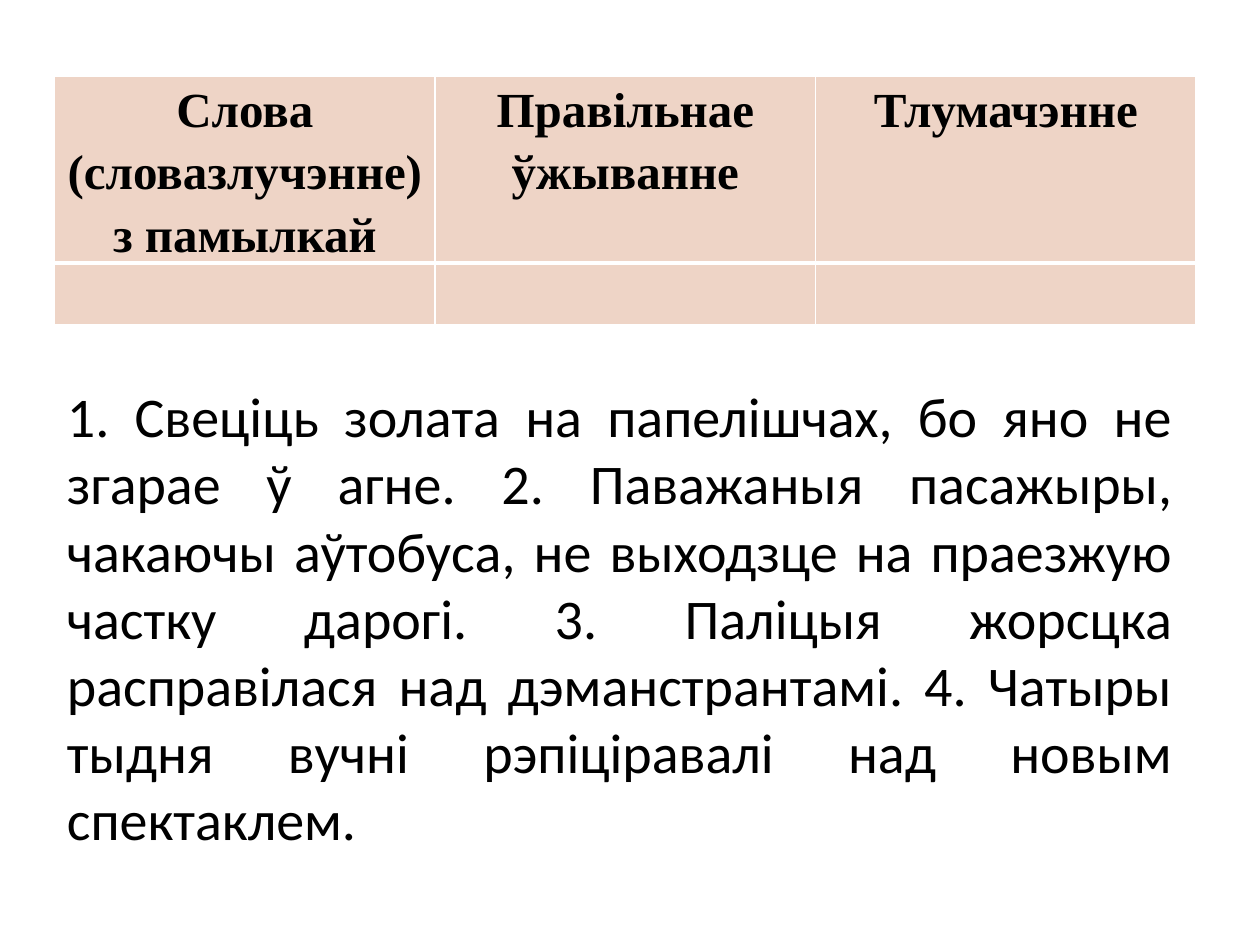
import pptx
import pptx.dml.color
import pptx.enum.text
import pptx.oxml
import pptx.oxml.ns
import pptx.util
from dataclasses import dataclass

Cm = pptx.util.Cm
Pt = pptx.util.Pt
Align = pptx.enum.text.PP_ALIGN


@dataclass(frozen=True)
class Theme:
    ink: str = "000000"
    cell: str = "EED4C6"
    rule: str = "FFFFFF"
    head_font: str = "Times New Roman"
    body_font: str = "Calibri"
    head_size: int = 28
    body_size: int = 32


class SlideBuilder:
    def __init__(self, page, theme):
        self.page = page
        self.theme = theme

    def fill_para(self, para, text, font, size, align, bold=False):
        para.text = text
        para.alignment = align
        for span in para.runs:
            span.font.name = font
            span.font.size = Pt(size)
            span.font.bold = bold
            span.font.color.rgb = pptx.dml.color.RGBColor.from_string(self.theme.ink)

    def borders(self, cell, widths):
        """Draw the cell edges; widths maps L, R, T, B (in that order) to points."""
        properties = cell._tc.get_or_add_tcPr()
        for index, (side, width) in enumerate(widths.items()):
            line = pptx.oxml.parse_xml(
                f'<a:ln{side} {pptx.oxml.ns.nsdecls("a")} w="{Pt(width)}">'
                f'<a:solidFill><a:srgbClr val="{self.theme.rule}"/></a:solidFill>'
                f'</a:ln{side}>')
            properties.insert(index, line)

    def table(self, headings, left, top, column_width, row_heights):
        frame = self.page.shapes.add_table(
            len(row_heights), len(headings), Cm(left), Cm(top),
            Cm(column_width * len(headings)), Cm(sum(row_heights)))
        grid = frame.table
        for column in grid.columns:
            column.width = Cm(column_width)
        for row, height in zip(grid.rows, row_heights):
            row.height = Cm(height)

        # Same fill everywhere, a heavier rule under the heading row
        for cell in grid.iter_cells():
            cell.fill.solid()
            cell.fill.fore_color.rgb = pptx.dml.color.RGBColor.from_string(self.theme.cell)
        for number, row in enumerate(grid.rows):
            top_rule, bottom_rule = (1, 3) if number == 0 else (3, 1)
            for cell in row.cells:
                self.borders(cell, {"L": 1, "R": 1, "T": top_rule, "B": bottom_rule})

        for cell, heading in zip(grid.rows[0].cells, headings):
            cell.margin_left = cell.margin_right = Cm(0.18)
            cell.margin_top = cell.margin_bottom = 0
            para = cell.text_frame.paragraphs[0]
            self.fill_para(para, heading, self.theme.head_font, self.theme.head_size,
                           Align.CENTER, bold=True)
            para.line_spacing = 1.15
            para.space_after = Pt(10)

    def text(self, content, left, top, width, height):
        box = self.page.shapes.add_textbox(Cm(left), Cm(top), Cm(width), Cm(height))
        frame = box.text_frame
        frame.word_wrap = True
        frame.auto_size = pptx.enum.text.MSO_AUTO_SIZE.SHAPE_TO_FIT_TEXT
        frame.vertical_anchor = pptx.enum.text.MSO_ANCHOR.MIDDLE
        self.fill_para(frame.paragraphs[0], content, self.theme.body_font,
                       self.theme.body_size, Align.JUSTIFY)


def main():
    deck = pptx.Presentation()
    deck.slide_width, deck.slide_height = Cm(25.4), Cm(19.05)
    builder = SlideBuilder(deck.slides.add_slide(deck.slide_layouts[6]), Theme())

    # Answer table
    builder.table(
        ["Слова (словазлучэнне) з памылкай", "Правільнае ўжыванне", "Тлумачэнне"],
        left=1.1, top=1.53, column_width=7.67, row_heights=[3.75, 1.25])

    # Exercise sentences
    builder.text(
        "1. Свеціць золата на папелішчах, бо яно не згарае ў агне. "
        "2. Паважаныя пасажыры, чакаючы аўтобуса, не выходзце на праезжую частку дарогі. "
        "3. Паліцыя жорсцка расправілася над дэманстрантамі. "
        "4. Чатыры тыдня вучні рэпіціравалі над новым спектаклем.",
        left=1.1, top=7.52, width=22.8, height=9.83)

    deck.save("out.pptx")


if __name__ == "__main__":
    main()
